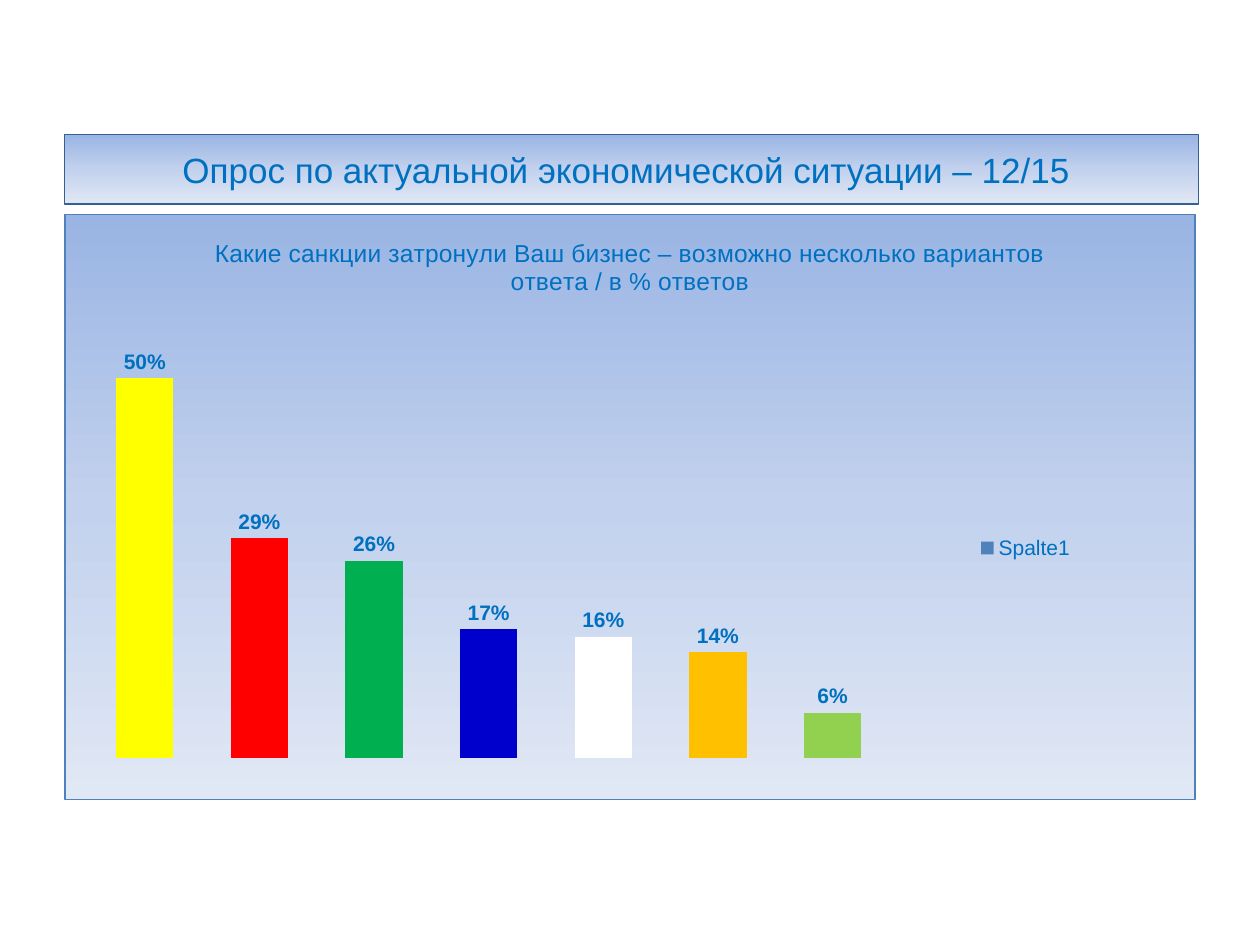
from lxml.etree import SubElement
from pptx import Presentation
from pptx.chart.data import CategoryChartData
from pptx.dml.color import RGBColor
from pptx.enum.chart import XL_CHART_TYPE as CT, XL_LABEL_POSITION as LP, XL_LEGEND_POSITION as LG
from pptx.enum.text import MSO_ANCHOR, PP_ALIGN
from pptx.oxml import parse_xml
from pptx.oxml.ns import nsdecls, qn
from pptx.util import Inches, Pt

TITLE = "Опрос по актуальной экономической ситуации – 12/15 "
QUESTION = ("Какие санкции затронули Ваш бизнес – возможно несколько "
            "вариантов ответа / в % ответов")
SERIES, SERIES_COLOR = "Spalte1", "4F81BD"
ANSWERS = [("1", 0.50, "FFFF00"), ("2", 0.29, "FF0000"), ("3", 0.26, "00B050"),
           ("4", 0.17, "0000CC"), ("5", 0.16, "FFFFFF"), ("6", 0.14, "FFC000"),
           ("7", 0.06, "92D050")]
GRADIENT = [(0, "9AB5E4"), (50, "C2D1ED"), (100, "E1E8F5")]
TITLE_BOX = (0.51, 1.07, 9, 0.55)
CHART_BOX = (0.51, 1.7, 8.98, 4.65)
PLOT_AREA = (0.02, 0.15, 0.71, 0.78)
LEGEND_AREA = (0.79, 0.54, 0.12, 0.06)
TEXT_COLOR = "0070C0"


def rgb(value):
    """Turn a hex string into a colour."""
    return RGBColor.from_string(value)


def set_font(font, size, bold=False):
    """Apply the common text format."""
    for name, value in {"name": "Arial", "size": Pt(size), "bold": bold}.items():
        setattr(font, name, value)
    font.color.rgb = rgb(TEXT_COLOR)


def gradient():
    """Return the vertical gradient fill element."""
    stops = "".join(f'<a:gs pos="{pos * 1000}"><a:srgbClr val="{color}"/></a:gs>'
                    for pos, color in GRADIENT)
    return parse_xml(f'<a:gradFill {nsdecls("a")} rotWithShape="1"><a:gsLst>{stops}'
                     '</a:gsLst><a:lin ang="5400000" scaled="0"/></a:gradFill>')


def manual_layout(area, inner=False):
    """Return a chart layout element for fractions of the chart area."""
    layout = parse_xml(f'<c:layout {nsdecls("c")}><c:manualLayout/></c:layout>')
    values = [("layoutTarget", "inner")] if inner else []
    values += [("xMode", "edge"), ("yMode", "edge"), *zip("xywh", area)]
    for tag, value in values:
        SubElement(layout[0], qn(f"c:{tag}")).set("val", str(value))
    return layout


def add_title(s):
    """Format the title placeholder as a gradient bar."""
    sp = s.shapes.title
    sp.left, sp.top, sp.width, sp.height = map(Inches, TITLE_BOX)
    sp._element.spPr.append(gradient())
    sp.line.color.rgb = rgb("376092")
    sp.line.width = Pt(0.75)
    tf = sp.text_frame
    tf.text = TITLE
    tf.vertical_anchor = MSO_ANCHOR.MIDDLE
    p = tf.paragraphs[0]
    p.alignment = PP_ALIGN.CENTER
    set_font(p.runs[0].font, 20)


def add_answers(s):
    """Add the column chart of answers."""
    names, values, colors = zip(*ANSWERS)
    data = CategoryChartData(number_format="0%")
    data.categories = names
    data.add_series(SERIES, values)
    chart = s.shapes.add_chart(CT.COLUMN_CLUSTERED, *map(Inches, CHART_BOX), data).chart
    chart.font.name, chart.font.size = "Calibri", Pt(18)
    p = chart.chart_title.text_frame.paragraphs[0]
    r = p.add_run()
    r.text = QUESTION
    set_font(r.font, 14)
    chart.chart_title.include_in_layout = False

    chart.has_legend = True
    legend = chart.legend
    legend.position, legend.include_in_layout = LG.RIGHT, False
    set_font(legend.font, 12)
    legend._element.find(qn("c:legendPos")).addnext(manual_layout(LEGEND_AREA))

    axis = chart.value_axis
    axis.minimum_scale, axis.maximum_scale = 0, 0.6
    axis.has_major_gridlines = False
    axis.visible = chart.category_axis.visible = False

    plot = chart.plots[0]
    plot.gap_width, plot.vary_by_categories = 100, False
    series = plot.series[0]
    series.format.fill.solid()
    series.format.fill.fore_color.rgb = rgb(SERIES_COLOR)
    for i, color in enumerate(colors):
        fill = series.points[i].format.fill
        fill.solid()
        fill.fore_color.rgb = rgb(color)
    labels = series.data_labels
    label_format = {"show_value": True, "number_format": "0%",
                    "number_format_is_linked": False, "position": LP.OUTSIDE_END}
    for name, value in label_format.items():
        setattr(labels, name, value)
    set_font(labels.font, 12, True)

    root = chart._chartSpace
    area = root.chart.plotArea
    for old in area.findall(qn("c:layout")):
        area.remove(old)
    area.insert(0, manual_layout(PLOT_AREA, True))
    props = parse_xml(f'<c:spPr {nsdecls("c", "a")}><a:ln w="{Pt(0.75)}"><a:solidFill>'
                      f'<a:srgbClr val="{SERIES_COLOR}"/></a:solidFill></a:ln></c:spPr>')
    props.insert(0, gradient())
    root.chart.addnext(props)


def main():
    """Build and save the slide."""
    prs = Presentation()
    prs.slide_width, prs.slide_height = Inches(10), Inches(7.5)
    s = prs.slides.add_slide(prs.slide_layouts[5])
    add_title(s)
    add_answers(s)
    prs.save("out.pptx")


if __name__ == "__main__":
    main()
